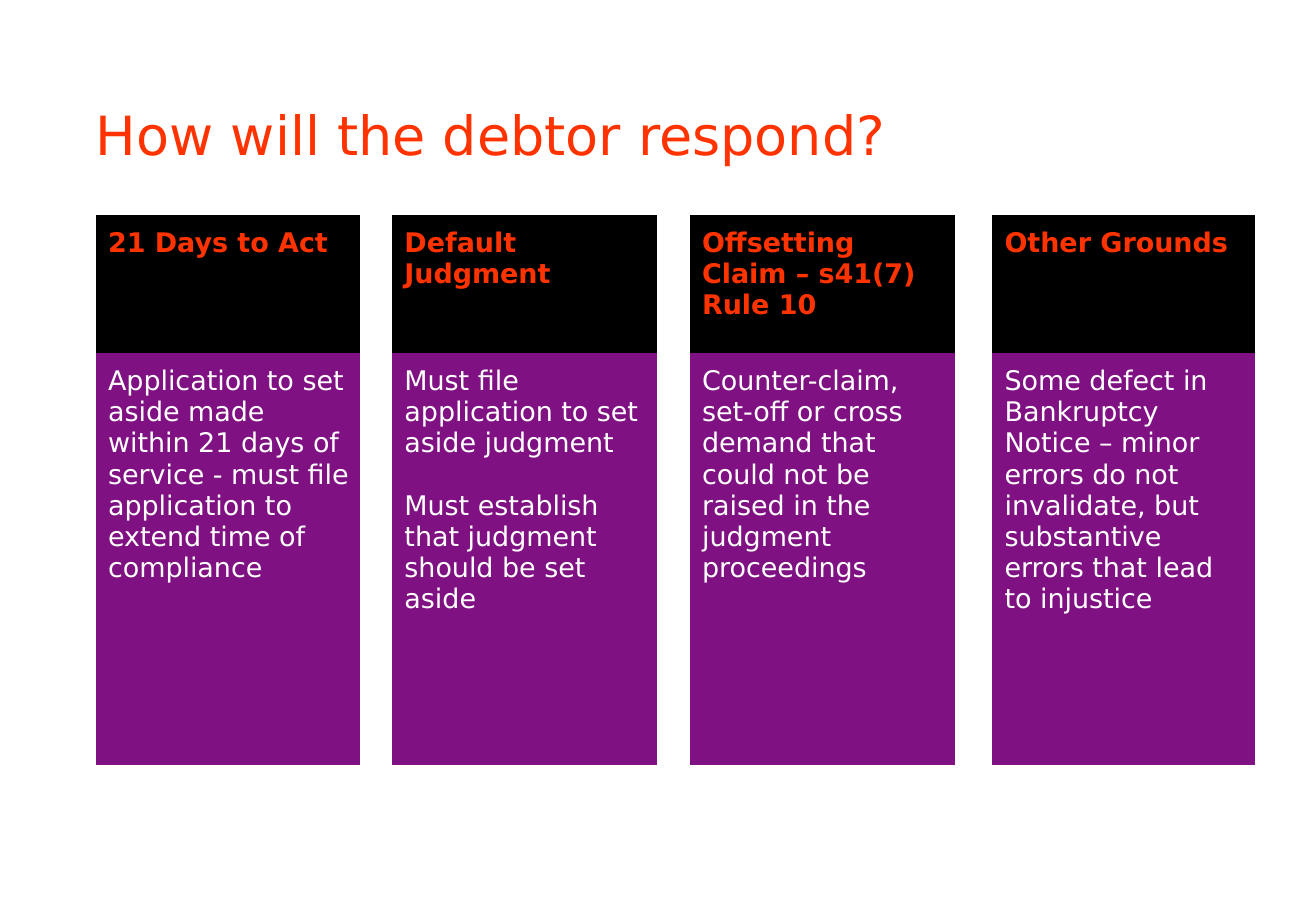
from dataclasses import dataclass

import pptx
import pptx.dml.color
import pptx.enum.text
import pptx.oxml.ns
import pptx.presentation
import pptx.slide
import pptx.table
import pptx.util

RGBColor = pptx.dml.color.RGBColor
ORANGE = RGBColor(0xFF, 0x33, 0x00)
BLACK = RGBColor(0x00, 0x00, 0x00)
PURPLE = RGBColor(0x7F, 0x11, 0x83)
WHITE = RGBColor(0xFF, 0xFF, 0xFF)

FONT = "DejaVu Sans"
SLIDE_WIDTH = pptx.util.Inches(10.83)
SLIDE_HEIGHT = pptx.util.Inches(7.5)
LEFT_PERCENT = 7.29
TITLE_TOP_PERCENT, TITLE_WIDTH_PERCENT, TITLE_HEIGHT_PERCENT = 7.87, 88.09, 13.6
TABLE_TOP_PERCENT = 23.6
ROW_PERCENTS = (15.2, 45.2)
PLAIN_STYLE = "{2D5ABB26-0587-4C30-8999-92F81FD0307C}"

TITLE_FONT = {"name": FONT, "size": pptx.util.Pt(32), "bold": False}
CELL_FONT = {"name": FONT, "size": pptx.util.Pt(16)}
CELL_MARGINS = {
    "margin_left": pptx.util.Inches(0.1),
    "margin_top": pptx.util.Inches(0.1),
    "margin_right": pptx.util.Inches(0.08),
    "margin_bottom": pptx.util.Inches(0.04),
}


@dataclass(frozen=True)
class Response:
    """One answer open to the debtor, with column and gap in percent of slide width."""

    heading: str
    details: tuple[str, ...]
    width: float
    gap_before: float = 2.49


@dataclass(frozen=True)
class CellLook:
    """Colours and weight of one table row."""

    fill: RGBColor
    text: RGBColor
    bold: bool


HEADING_LOOK = CellLook(BLACK, ORANGE, True)
DETAIL_LOOK = CellLook(PURPLE, WHITE, False)

RESPONSES = (
    Response(
        "21 Days to Act",
        ("Application to set aside made within 21 days of service - must file "
         "application to extend time of compliance",),
        20.04,
    ),
    Response(
        "Default Judgment",
        ("Must file application to set aside judgment",
         "Must establish that judgment should be set aside"),
        20.13,
    ),
    Response(
        "Offsetting Claim – s41(7) Rule 10",
        ("Counter-claim, set-off or cross demand that could not be raised in the "
         "judgment proceedings",),
        20.13,
    ),
    Response(
        "Other Grounds",
        ("Some defect in Bankruptcy Notice – minor errors do not invalidate, but "
         "substantive errors that lead to injustice",),
        19.94,
        2.86,
    ),
)


def across(percent: float) -> int:
    """Return a share of the slide's width."""
    return round(SLIDE_WIDTH * percent / 100)


def down(percent: float) -> int:
    """Return a share of the slide's height."""
    return round(SLIDE_HEIGHT * percent / 100)


def apply_format(target: object, values: dict[str, object]) -> None:
    """Set each named attribute on the target."""
    for name, value in values.items():
        setattr(target, name, value)


def format_title(slide: pptx.slide.Slide) -> None:
    """Place, fill and format the title placeholder."""
    title = slide.shapes.title
    apply_format(title, {
        "left": across(LEFT_PERCENT),
        "top": down(TITLE_TOP_PERCENT),
        "width": across(TITLE_WIDTH_PERCENT),
        "height": down(TITLE_HEIGHT_PERCENT),
    })
    frame = title.text_frame
    frame.text = "How will the debtor respond?"
    apply_format(frame, {
        **dict.fromkeys(CELL_MARGINS, 0),
        "vertical_anchor": pptx.enum.text.MSO_ANCHOR.MIDDLE,
        "auto_size": pptx.enum.text.MSO_AUTO_SIZE.NONE,
        "word_wrap": True,
    })
    paragraph = frame.paragraphs[0]
    paragraph.alignment = pptx.enum.text.PP_ALIGN.LEFT
    apply_format(paragraph.font, TITLE_FONT)
    paragraph.font.color.rgb = ORANGE


def fill_cell(cell: pptx.table._Cell, texts: tuple[str, ...], look: CellLook) -> None:
    """Write the paragraphs of a cell in the given look."""
    cell.fill.solid()
    cell.fill.fore_color.rgb = look.fill
    apply_format(cell, CELL_MARGINS)
    cell.text = "\n".join(texts)
    for index, paragraph in enumerate(cell.text_frame.paragraphs):
        if index:
            paragraph.space_before = pptx.util.Pt(18.6)
        apply_format(paragraph.font, {**CELL_FONT, "bold": look.bold})
        paragraph.font.color.rgb = look.text


def add_response_table(slide: pptx.slide.Slide) -> None:
    """Add the responses as columns parted by empty gap columns."""
    percents = [
        percent
        for response in RESPONSES
        for percent in (response.gap_before, response.width)
    ][1:]
    table = slide.shapes.add_table(
        len(ROW_PERCENTS), len(percents), across(LEFT_PERCENT),
        down(TABLE_TOP_PERCENT), across(sum(percents)), down(sum(ROW_PERCENTS)),
    ).table
    apply_format(table, {"first_row": False, "horz_banding": False})
    table._tbl.tblPr.find(pptx.oxml.ns.qn("a:tableStyleId")).text = PLAIN_STYLE
    for column, percent in zip(table.columns, percents):
        column.width = across(percent)
    for row, percent in zip(table.rows, ROW_PERCENTS):
        row.height = down(percent)
    for cell in table.iter_cells():
        cell.fill.background()
    for index, response in enumerate(RESPONSES):
        fill_cell(table.cell(0, 2 * index), (response.heading,), HEADING_LOOK)
        fill_cell(table.cell(1, 2 * index), response.details, DETAIL_LOOK)


def main() -> None:
    """Build and save the presentation."""
    presentation = pptx.Presentation()
    apply_format(presentation, {"slide_width": SLIDE_WIDTH, "slide_height": SLIDE_HEIGHT})
    slide = presentation.slides.add_slide(presentation.slide_layouts.get_by_name("Title Only"))
    format_title(slide)
    add_response_table(slide)
    presentation.save("out.pptx")


if __name__ == "__main__":
    main()
